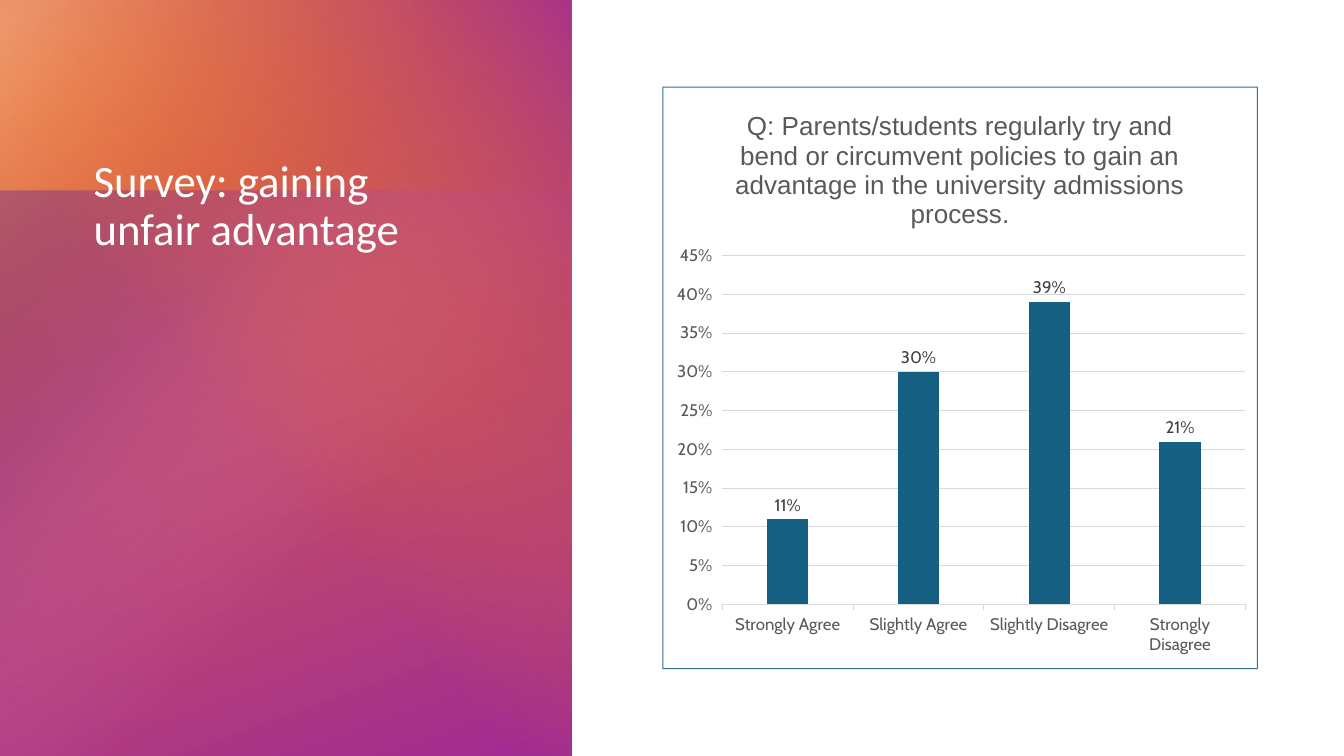
from dataclasses import dataclass

from pptx import Presentation
from pptx.chart.data import CategoryChartData as ChartData
from pptx.dml.color import RGBColor as RGB
from pptx.enum.chart import XL_CHART_TYPE as Kind
from pptx.enum.chart import XL_LABEL_POSITION as Spot
from pptx.enum.chart import XL_TICK_MARK as Tick
from pptx.enum.shapes import MSO_SHAPE as Shape
from pptx.enum.text import MSO_ANCHOR as Anchor
from pptx.enum.text import PP_ALIGN as Align
from pptx.oxml import parse_xml
from pptx.oxml.ns import nsdecls, qn
from pptx.util import Cm, Pt


@dataclass(frozen=True)
class Theme:
    white: str = "FFFFFF"
    orange: str = "E97132"
    peach: str = "F2AA84"
    purple: str = "A02B93"
    plum: str = "78206E"
    pink: str = "D86ECC"
    blue: str = "156082"
    grey: str = "595959"
    dark: str = "404040"
    rule: str = "D9D9D9"
    head: str = "Calibri"
    body: str = "Cabin"
    plain: str = "Arial"
    big: float = 32
    mid: float = 18.6
    small: float = 12


T = Theme()
TITLE = "Survey: gaining unfair advantage"
ASK = ("Q: Parents/students regularly try and bend or circumvent policies "
       "to gain an advantage in the university admissions process.")
VOTES = {"Strongly Agree": 0.11, "Slightly Agree": 0.3,
         "Slightly Disagree": 0.39, "Strongly Disagree": 0.21}


def style(font, face, size, color):
    font.name, font.size, font.bold = face, Pt(size), False
    font.color.rgb = RGB.from_string(color)


def write(frame, text, face=T.head, size=T.big, color=T.white,
          align=Align.LEFT, space=None):
    par = frame.paragraphs[0]
    par.alignment, par.line_spacing = align, space
    run = par.add_run()
    run.text = text
    style(run.font, face, size, color)


def blend(shape, stops, angle=None):
    """Fill with (percent, colour, opacity) stops; radial if no angle."""
    marks = "".join(
        f'<a:gs pos="{pos * 1000}"><a:srgbClr val="{color}">'
        f'<a:alpha val="{alpha * 1000}"/></a:srgbClr></a:gs>'
        for pos, color, alpha in stops)
    if angle is None:
        way = '<a:path path="circle"><a:fillToRect r="100000" b="100000"/></a:path>'
    else:
        way = f'<a:lin ang="{angle * 60000}" scaled="0"/>'
    fill = parse_xml(f'<a:gradFill {nsdecls("a")} rotWithShape="1">'
                     f'<a:gsLst>{marks}</a:gsLst>{way}</a:gradFill>')
    shape.element.spPr.find(qn("a:prstGeom")).addnext(fill)


def panel(slide, x, y, w, h):
    group = slide.shapes.add_group_shape()
    drop = 4.8
    layers = (
        ((x, y, w, h), 0, 70, [(7, T.orange, 100), (100, T.purple, 100)]),
        ((x, y + drop, w, h - drop), 180, None,
         [(0, T.plum, 100), (60, T.pink, 0)]),
        ((x, y, 10.64, h), 0, 50, [(3, T.peach, 78), (42, T.orange, 0)]),
        ((x + (w - h) / 2, y + (h - w) / 2, h, w), 270, 230,
         [(0, T.purple, 86), (57, T.orange, 0)]),
    )
    for box, turn, angle, stops in layers:
        layer = group.shapes.add_shape(Shape.RECTANGLE, *map(Cm, box))
        layer.shadow.inherit = False
        layer.line.fill.background()
        layer.rotation = turn
        blend(layer, stops, angle)


def heading(slide, x, y, w, h):
    frame = slide.shapes.add_textbox(*map(Cm, (x, y, w, h))).text_frame
    frame.word_wrap = True
    frame.vertical_anchor = Anchor.BOTTOM
    write(frame, TITLE, space=0.9)


def border(chart):
    edge = parse_xml(
        f'<c:spPr {nsdecls("c", "a")}><a:noFill/><a:ln w="{Pt(0.75)}">'
        f'<a:solidFill><a:srgbClr val="{T.blue}"><a:alpha val="87000"/>'
        '</a:srgbClr></a:solidFill></a:ln></c:spPr>')
    chart.element.find(qn("c:txPr")).addprevious(edge)


def place(plot, x, y, w, h):
    """Fix the inner plot area, in fractions of the chart."""
    old = plot.find(qn("c:layout"))
    if old is not None:
        plot.remove(old)
    sizes = "".join(f'<c:{key} val="{val}"/>'
                    for key, val in zip("xywh", (x, y, w, h)))
    plot.insert(0, parse_xml(
        f'<c:layout {nsdecls("c")}><c:manualLayout>'
        '<c:layoutTarget val="inner"/><c:xMode val="edge"/>'
        f'<c:yMode val="edge"/>{sizes}</c:manualLayout></c:layout>'))


def rule(line):
    line.color.rgb = RGB.from_string(T.rule)
    line.width = Pt(0.75)


def survey(slide, x, y, w, h):
    data = ChartData(number_format="0%")
    data.categories = list(VOTES)
    data.add_series("Series 1", list(VOTES.values()))
    chart = slide.shapes.add_chart(
        Kind.COLUMN_CLUSTERED, *map(Cm, (x, y, w, h)), data).chart
    style(chart.font, T.body, T.small, T.grey)
    border(chart)
    chart.has_legend = False
    chart.has_title = True
    chart.chart_title.include_in_layout = False
    write(chart.chart_title.text_frame, ASK, face=T.plain, size=T.mid,
          color=T.grey, align=Align.CENTER)

    cats, vals = chart.category_axis, chart.value_axis
    for axis in (cats, vals):
        style(axis.tick_labels.font, T.body, T.small, T.grey)
        axis.major_tick_mark = Tick.OUTSIDE
    rule(cats.format.line)
    vals.format.line.fill.background()
    vals.has_major_gridlines = True
    rule(vals.major_gridlines.format.line)
    vals.minimum_scale, vals.maximum_scale, vals.major_unit = 0, 0.45, 0.05
    vals.tick_labels.number_format = "0%"
    vals.tick_labels.number_format_is_linked = False

    plot = chart.plots[0]
    plot.gap_width, plot.overlap, plot.vary_by_categories = 219, -27, False
    bars = plot.series[0]
    bars.format.fill.solid()
    bars.format.fill.fore_color.rgb = RGB.from_string(T.blue)
    tags = bars.data_labels
    tags.show_value = True
    tags.position = Spot.OUTSIDE_END
    tags.number_format, tags.number_format_is_linked = "0%", False
    style(tags.font, T.body, T.small, T.dark)
    place(chart.element.find(".//" + qn("c:plotArea")), 0.1, 0.29, 0.88, 0.6)


def main():
    deck = Presentation()
    deck.slide_width, deck.slide_height = Cm(33.87), Cm(19.05)
    slide = deck.slides.add_slide(deck.slide_layouts[6])
    panel(slide, -0.05, 0, 14.45, 19.12)
    heading(slide, 2.11, 2.06, 10.29, 4.5)
    survey(slide, 16.69, 2.18, 15.01, 14.68)
    deck.save("out.pptx")


if __name__ == "__main__":
    main()
